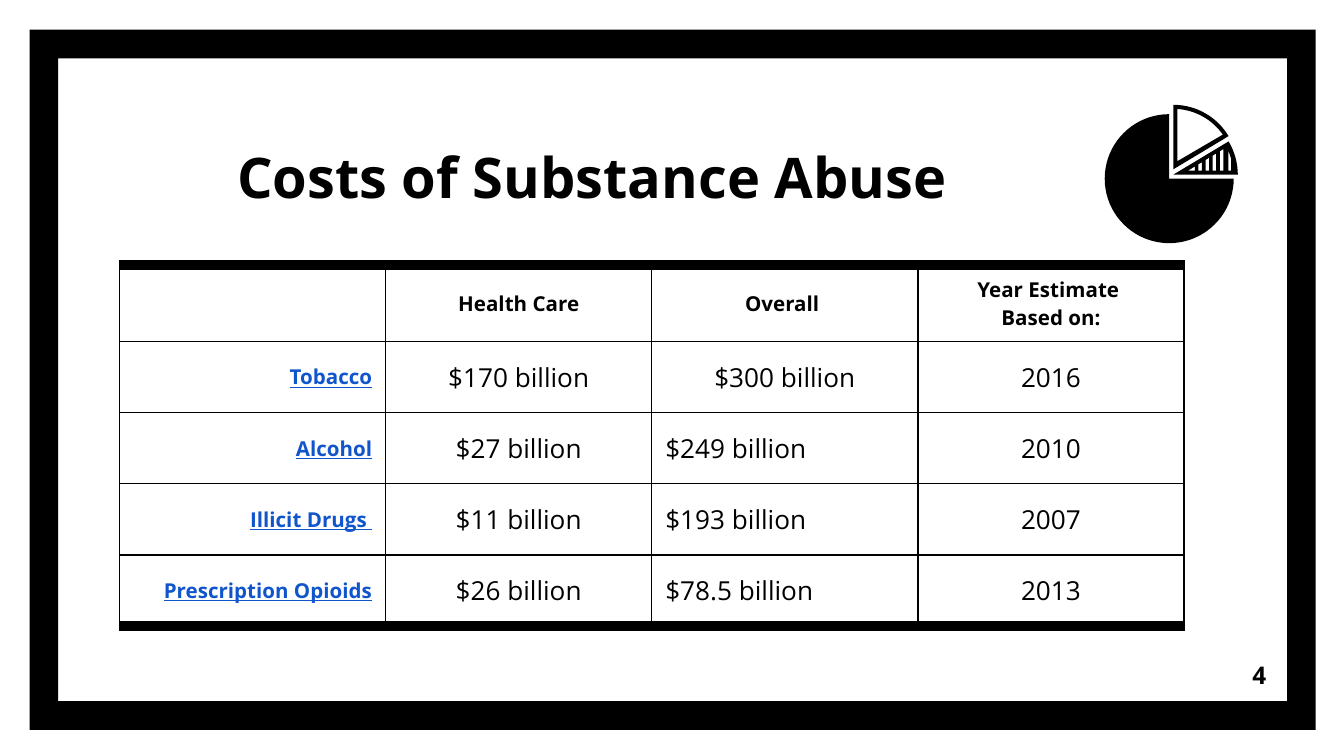
from math import cos, radians, sin

from lxml import etree
from pptx import Presentation
from pptx.dml.color import RGBColor
from pptx.enum.shapes import MSO_SHAPE
from pptx.enum.text import MSO_ANCHOR, PP_ALIGN
from pptx.oxml.ns import qn
from pptx.util import Inches, Pt

LEFT, CENTER, RIGHT = PP_ALIGN.LEFT, PP_ALIGN.CENTER, PP_ALIGN.RIGHT
MIDDLE, BOTTOM = MSO_ANCHOR.MIDDLE, MSO_ANCHOR.BOTTOM
FONT = "Open Sans"
COLORS = {"ink": "000000", "link": "1155CC"}


def write(tf, lines, size, align, bold=True, color="ink", underline=False):
    for i, line in enumerate(lines):
        p = tf.add_paragraph() if i else tf.paragraphs[0]
        p.alignment = align
        r = p.add_run()
        r.text = line
        r.font.name = FONT
        r.font.size = Pt(size)
        r.font.bold = bold
        r.font.underline = underline
        r.font.color.rgb = RGBColor.from_string(COLORS[color])


def arc(cx, cy, radius, start, end, steps):
    angles = [radians(start + (end - start) * i / steps) for i in range(steps + 1)]
    return [(cx + radius * sin(a), cy - radius * cos(a)) for a in angles]


prs = Presentation()
prs.slide_width = Inches(10)
prs.slide_height = Inches(10) * 9 // 16
s = prs.slides.add_slide(prs.slide_layouts[6])

frame = s.shapes.add_shape(MSO_SHAPE.FRAME, Inches(0.22), Inches(0.22), Inches(9.57), Inches(5.21))
frame.adjustments[0] = 0.041
frame.fill.solid()
frame.fill.fore_color.rgb = RGBColor.from_string(COLORS["ink"])
frame.line.fill.background()
frame.shadow.inherit = False

texts = [
    ("Costs of Substance Abuse", (0.89, 0.78, 7.03, 0.88), 30, CENTER, BOTTOM),
    ("4", (8.92, 4.81, 0.6, 0.43), 13, RIGHT, MIDDLE),
]
for text, box, size, align, anchor in texts:
    tf = s.shapes.add_textbox(*[Inches(v) for v in box]).text_frame
    tf.word_wrap = True
    tf.vertical_anchor = anchor
    tf.margin_left = tf.margin_right = tf.margin_top = tf.margin_bottom = Inches(0.1)
    write(tf, [text], size, align)

rows = [
    ("", "Health Care", "Overall ", "Year Estimate \nBased on:"),
    ("Tobacco", "$170 billion", "$300 billion", "2016"),
    ("Alcohol", "$27 billion", "$249 billion", "2010"),
    ("Illicit Drugs ", "$11 billion", "$193 billion", "2007"),
    ("Prescription Opioids", "$26 billion", "$78.5 billion", "2013"),
]
last = len(rows) - 1
table = s.shapes.add_table(
    len(rows), 4, Inches(0.89), Inches(1.97), Inches(4 * 1.98), Inches(0.57 + 4 * 0.53)
).table
table.first_row = table.horz_banding = False
for col in table.columns:
    col.width = Inches(1.98)
for i, row in enumerate(rows):
    table.rows[i].height = Inches(0.53 if i else 0.57)
    for j, text in enumerate(row):
        cell = table.cell(i, j)
        cell.vertical_anchor = MIDDLE
        cell.margin_left = cell.margin_right = Inches(0.1)
        cell.margin_top = cell.margin_bottom = Inches(0.07)
        cell.fill.background()
        tf = cell.text_frame
        if i == 0 and text:
            write(tf, text.split("\n"), 11, CENTER)
        elif i and j == 0:
            write(tf, [text], 11, RIGHT, color="link", underline=True)
        elif i:
            write(tf, [text], 14, LEFT if j == 2 and i > 1 else CENTER, bold=False)
        tcPr = cell._tc.get_or_add_tcPr()
        widths = {"lnL": 0.75, "lnR": 0.75, "lnT": 0.75 if i else 6, "lnB": 6 if i == last else 0.75}
        for k, (tag, width) in enumerate(widths.items()):
            ln = etree.Element(qn(f"a:{tag}"), w=str(Pt(width)))
            fill = etree.SubElement(ln, qn("a:solidFill"))
            etree.SubElement(fill, qn("a:srgbClr"), val=COLORS["ink"])
            tcPr.insert(k, ln)

large_slice = [(8.7, 1.33)] + arc(8.7, 1.33, 0.48, 360, 90, 60)

striped_slice = [[(8.73, 1.3)] + arc(8.73, 1.3, 0.48, 59, 90, 10)]
for i in range(5):
    right = 8.89 + 0.053 * i
    left = right - (0.026 if i else 0.05)
    top_left, top_right = [1.27 - 0.61 * (x - 8.84) for x in (left, right)]
    striped_slice.append([(left, top_left), (right, top_right), (right, 1.27), (left, 1.27)])
striped_slice.append([(9.14, 1.12), (9.15, 1.15), (9.16, 1.18), (9.16, 1.27), (9.14, 1.27)])

outlined_slice = [
    [(8.73, 1.26)] + arc(8.73, 1.26, 0.48, 0, 59, 16),
    [(8.76, 1.2)] + arc(8.73, 1.26, 0.45, 4, 55, 16),
]

for contours in ([large_slice], striped_slice, outlined_slice):
    outlines = [[(Inches(x), Inches(y)) for x, y in points] for points in contours]
    builder = s.shapes.build_freeform(*outlines[0][0])
    for i, points in enumerate(outlines):
        if i:
            builder.move_to(*points[0])
        builder.add_line_segments(points[1:], close=True)
    sp = builder.convert_to_shape()
    sp.fill.solid()
    sp.fill.fore_color.rgb = RGBColor.from_string(COLORS["ink"])
    sp.line.fill.background()
    sp.shadow.inherit = False

prs.save("out.pptx")
